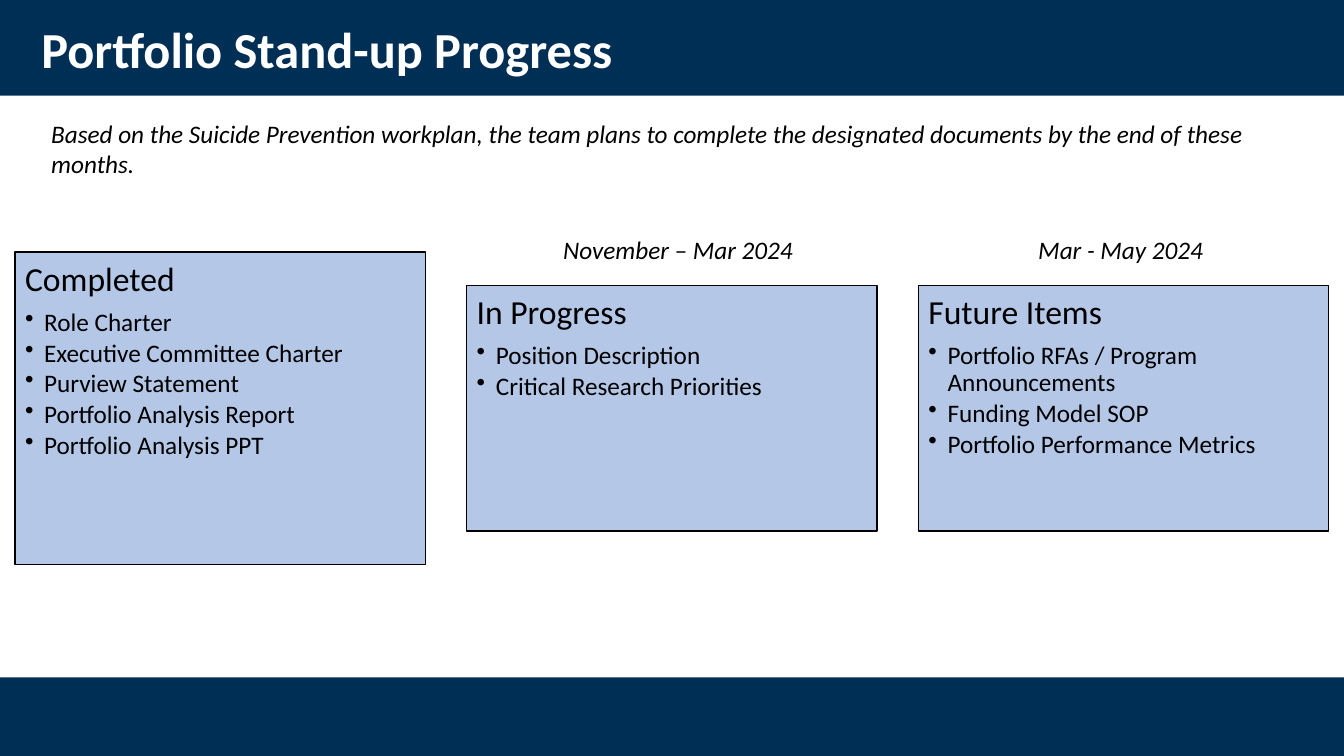
from dataclasses import dataclass

from lxml import etree
from pptx import Presentation
from pptx.dml.color import RGBColor
from pptx.enum.shapes import MSO_SHAPE
from pptx.enum.text import MSO_ANCHOR, PP_ALIGN
from pptx.oxml.ns import qn
from pptx.util import Inches, Pt

RECT = MSO_SHAPE.RECTANGLE
TOP, MIDDLE = MSO_ANCHOR.TOP, MSO_ANCHOR.MIDDLE
LEFT, CENTER = PP_ALIGN.LEFT, PP_ALIGN.CENTER


@dataclass(frozen=True)
class Theme:
    font: str = "Calibri"
    navy: RGBColor = RGBColor(0x00, 0x2F, 0x56)
    card: RGBColor = RGBColor(0xB4, 0xC7, 0xE7)
    ink: RGBColor = RGBColor(0, 0, 0)
    white: RGBColor = RGBColor(255, 255, 255)
    title_size: int = 36
    heading_size: int = 24
    body_size: int = 18


class SlideBuilder:
    def __init__(self, slide, theme):
        self.slide = slide
        self.theme = theme

    def run(self, p, text, size, color, bold=False, italic=False):
        r = p.add_run()
        r.text = text
        r.font.name = self.theme.font
        r.font.size = Pt(size)
        r.font.color.rgb = color
        r.font.bold = bold
        r.font.italic = italic

    def rect(self, left, top, width, height, fill, line=None):
        sp = self.slide.shapes.add_shape(
            RECT, Inches(left), Inches(top), Inches(width), Inches(height))
        sp.shadow.inherit = False
        sp.fill.solid()
        sp.fill.fore_color.rgb = fill
        if line is None:
            sp.line.fill.background()
        else:
            sp.line.color.rgb = line
            sp.line.width = Pt(1)
        return sp

    def title(self, text, left, top, width, height):
        sp = self.slide.shapes.title
        sp.left, sp.top = Inches(left), Inches(top)
        sp.width, sp.height = Inches(width), Inches(height)
        sp.element.getparent().append(sp.element)  # bring in front of the bars
        tf = sp.text_frame
        tf.vertical_anchor = MIDDLE
        p = tf.paragraphs[0]
        p.alignment = LEFT
        p.line_spacing = 0.9
        self.run(p, text, self.theme.title_size, self.theme.white, bold=True)

    def note(self, text, left, top, width, height, align=LEFT):
        """Add a line of italic text."""
        sp = self.slide.shapes.add_textbox(
            Inches(left), Inches(top), Inches(width), Inches(height))
        tf = sp.text_frame
        tf.word_wrap = True
        p = tf.paragraphs[0]
        p.alignment = align
        self.run(p, text, self.theme.body_size, self.theme.ink, italic=True)

    def bullet(self, p):
        pPr = p._p.get_or_add_pPr()
        pPr.set("marL", str(Inches(0.19)))
        pPr.set("indent", str(-Inches(0.19)))
        etree.SubElement(pPr, qn("a:buChar")).set("char", "•")

    def card(self, heading, items, left, top, width, height):
        """Add a filled box with a heading and a bulleted list."""
        t = self.theme
        tf = self.rect(left, top, width, height, t.card, t.ink).text_frame
        tf.word_wrap = True
        tf.vertical_anchor = TOP
        tf.margin_left = tf.margin_right = Inches(0.1)
        tf.margin_top = tf.margin_bottom = Inches(0.1)
        p = tf.paragraphs[0]
        p.alignment = LEFT
        p.line_spacing = 0.9
        p.space_after = Pt(8)
        self.run(p, heading, t.heading_size, t.ink)
        for item in items:
            p = tf.add_paragraph()
            self.bullet(p)
            p.level = 1
            p.alignment = LEFT
            p.line_spacing = 0.9
            p.space_after = Pt(2.5)
            self.run(p, item, t.body_size, t.ink)


CARD_LEFT, CARD_STEP, CARD_WIDTH = 0.15, 4.48, 4.07
CARDS = [
    ("Completed", 2.5, 3.1,
     ["Role Charter", "Executive Committee Charter", "Purview Statement",
      "Portfolio Analysis Report", "Portfolio Analysis PPT"]),
    ("In Progress", 2.83, 2.44,
     ["Position Description", "Critical Research Priorities"]),
    ("Future Items", 2.83, 2.44,
     ["Portfolio RFAs / Program Announcements", "Funding Model SOP",
      "Portfolio Performance Metrics"]),
]
PERIODS = [("November – Mar 2024", 5.19), ("Mar - May 2024", 9.58)]


def main():
    prs = Presentation()
    prs.slide_width, prs.slide_height = Inches(13.33), Inches(7.5)
    theme = Theme()
    s = SlideBuilder(prs.slides.add_slide(prs.slide_layouts[5]), theme)

    for top, height in ((0, 0.95), (6.72, 0.78)):
        s.rect(0, top, 13.33, height, theme.navy)
    s.title("Portfolio Stand-up Progress", 0.31, 0.18, 11.5, 0.68)

    for i, (heading, top, height, items) in enumerate(CARDS):
        s.card(heading, items, CARD_LEFT + i * CARD_STEP, top, CARD_WIDTH, height)

    s.note("Based on the Suicide Prevention workplan, the team plans to complete "
           "the designated documents by the end of these months.",
           0.41, 1.12, 12.7, 0.71)
    for period, left in PERIODS:
        s.note(period, left, 2.28, 3.07, 0.4, CENTER)

    prs.save("out.pptx")


if __name__ == "__main__":
    main()
